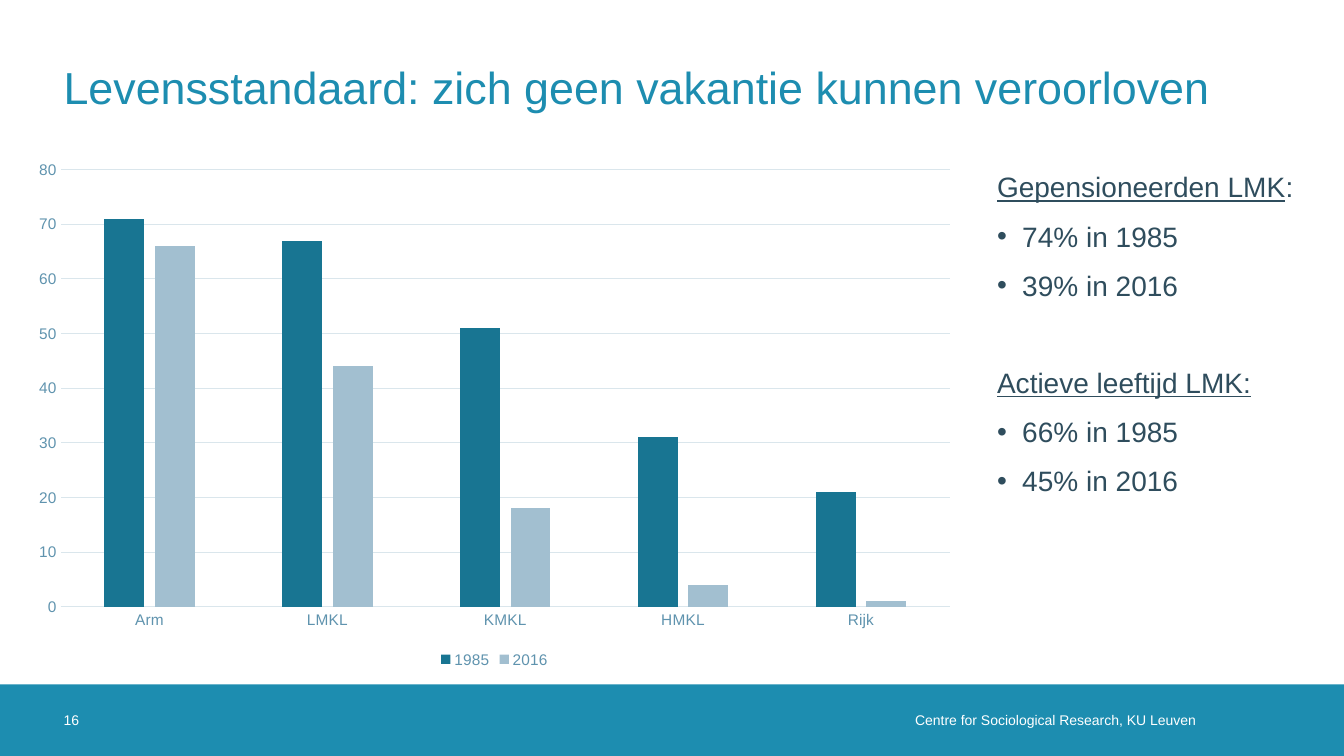
from lxml.etree import SubElement
from pptx import Presentation
from pptx.chart.data import CategoryChartData
from pptx.dml.color import RGBColor
from pptx.enum.chart import XL_CHART_TYPE as ChartType, XL_LEGEND_POSITION as LegendPosition
from pptx.enum.chart import XL_TICK_MARK as TickMark
from pptx.enum.shapes import MSO_SHAPE as Shape
from pptx.enum.text import MSO_ANCHOR as Anchor, MSO_AUTO_SIZE as AutoSize, PP_ALIGN as Align
from pptx.oxml.ns import qn
from pptx.util import Inches, Pt

COLORS = {
    "band": "1D8DB0",
    "white": "FFFFFF",
    "text": "2F4D5D",
    "axis": "5F93AE",
    "grid": "DAE6EC",
    "1985": "187592",
    "2016": "A2BFD0",
}


class SlideBuilder:
    font_name = "Arial"

    def __init__(self, slide):
        self.slide = slide

    def color(self, key):
        return RGBColor.from_string(COLORS[key])

    def style(self, font, size, color):
        font.name = self.font_name
        font.size = Pt(size)
        font.color.rgb = self.color(color)

    def place(self, shape, box):
        shape.left, shape.top, shape.width, shape.height = map(Inches, box)

    def frame(self, shape, anchor, margins):
        frame = shape.text_frame
        frame.word_wrap = True
        frame.auto_size = AutoSize.NONE
        frame.vertical_anchor = anchor
        (frame.margin_left, frame.margin_top,
         frame.margin_right, frame.margin_bottom) = map(Inches, margins)
        return frame

    def run(self, paragraph, text, size, color, underline=None):
        run = paragraph.add_run()
        run.text = text
        self.style(run.font, size, color)
        run.font.underline = underline

    def title(self, box, text):
        title = self.slide.shapes.title
        self.place(title, box)
        paragraph = self.frame(title, Anchor.MIDDLE, (0, 0, 0, 0)).paragraphs[0]
        paragraph.alignment = Align.LEFT
        self.run(paragraph, text, 32, "band")

    def band(self, box):
        band = self.slide.shapes.add_shape(Shape.RECTANGLE, *map(Inches, box))
        band.shadow.inherit = False
        band.fill.solid()
        band.fill.fore_color.rgb = self.color("band")
        band.line.fill.background()

    def footer(self, box, text, align, right_margin=0):
        footer = self.slide.shapes.add_textbox(*map(Inches, box))
        paragraph = self.frame(footer, Anchor.MIDDLE, (0, 0, right_margin, 0)).paragraphs[0]
        paragraph.alignment = align
        self.run(paragraph, text, 10, "white")

    def bullet(self, paragraph):
        properties = paragraph._p.get_or_add_pPr()
        properties.set("marL", str(Inches(0.25)))
        properties.set("indent", str(-Inches(0.25)))
        SubElement(properties, qn("a:buFont"), typeface=self.font_name)
        SubElement(properties, qn("a:buChar"), char="•")

    def findings(self, box, groups):
        findings = self.slide.shapes.add_textbox(*map(Inches, box))
        frame = self.frame(findings, Anchor.TOP, (0.1, 0.05, 0.1, 0.05))
        for index, (heading, points) in enumerate(groups):
            paragraph = frame.add_paragraph() if index else frame.paragraphs[0]
            paragraph.line_spacing = 1.05
            paragraph.space_before = Pt(44 if index else 0)
            for text, underline in heading:
                self.run(paragraph, text, 20, "text", underline)
            for point in points:
                paragraph = frame.add_paragraph()
                self.bullet(paragraph)
                paragraph.line_spacing = 1.05
                paragraph.space_before = Pt(10)
                self.run(paragraph, point, 20, "text")

    def hairline(self, line):
        line.color.rgb = self.color("grid")
        line.width = Pt(0.75)

    def column_chart(self, box, categories, values_by_year):
        data = CategoryChartData(number_format="0")
        data.categories = categories
        for year, values in values_by_year.items():
            data.add_series(year, values)
        chart = self.slide.shapes.add_chart(
            ChartType.COLUMN_CLUSTERED, *map(Inches, box), data).chart
        chart.has_title = False
        self.style(chart.font, 11, "text")

        plot = chart.plots[0]
        plot.vary_by_categories = False
        plot.gap_width = 219
        plot.overlap = -27
        for series in plot.series:
            series.format.fill.solid()
            series.format.fill.fore_color.rgb = self.color(series.name)

        for axis in (chart.category_axis, chart.value_axis):
            axis.major_tick_mark = axis.minor_tick_mark = TickMark.NONE
            self.style(axis.tick_labels.font, 11, "axis")
        self.hairline(chart.category_axis.format.line)
        scale = chart.value_axis
        scale.minimum_scale, scale.maximum_scale, scale.major_unit = 0, 80, 10
        scale.tick_labels.number_format = "0"
        scale.tick_labels.number_format_is_linked = False
        scale.format.line.fill.background()
        scale.has_major_gridlines = True
        self.hairline(scale.major_gridlines.format.line)

        chart.has_legend = True
        chart.legend.position = LegendPosition.BOTTOM
        chart.legend.include_in_layout = False
        self.style(chart.legend.font, 11, "axis")


def main():
    deck = Presentation()
    deck.slide_width, deck.slide_height = Inches(13.33), Inches(7.5)
    builder = SlideBuilder(deck.slides.add_slide(deck.slide_layouts[5]))

    builder.band((0, 6.79, 13.33, 0.71))
    builder.footer((6.6, 6.79, 5.46, 0.71), "Centre for Sociological Research, KU Leuven",
                   Align.RIGHT, 0.2)
    builder.footer((0.63, 6.79, 0.71, 0.71), "16", Align.LEFT)
    builder.title((0.63, 0.23, 12.07, 1.26),
                  "Levensstandaard: zich geen vakantie kunnen veroorloven")
    builder.column_chart(
        (0.2, 1.49, 9.41, 5.18),
        ["Arm", "LMKL", "KMKL", "HMKL", "Rijk"],
        {"1985": [71, 67, 51, 31, 21], "2016": [66, 44, 18, 4, 1]},
    )
    builder.findings((9.79, 1.62, 3.32, 4.88), [
        ([("Gepensioneerden LMK", True), (":", False)], ["74% in 1985", "39% in 2016"]),
        ([("Actieve leeftijd LMK:", True)], ["66% in 1985", "45% in 2016"]),
    ])
    deck.save("out.pptx")


if __name__ == "__main__":
    main()
